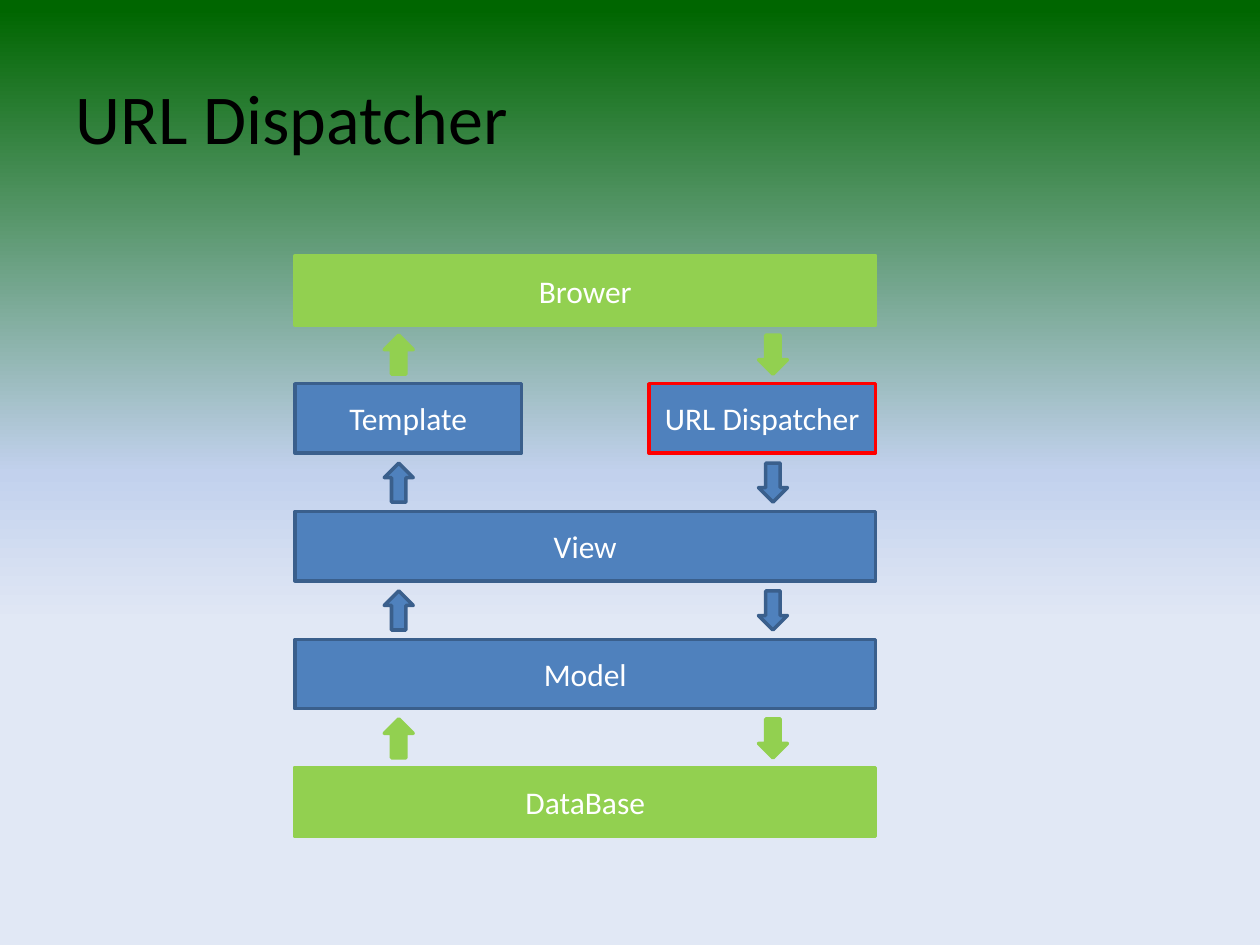
from dataclasses import dataclass

from lxml import etree
from pptx import Presentation
from pptx import util as u
from pptx.dml.color import RGBColor
from pptx.enum import shapes, text
from pptx.oxml import ns


@dataclass(frozen=True)
class Theme:
    font: str = "Calibri"
    title_size: int = 40
    label_size: int = 18
    line_width: int = 2
    title: str = "000000"
    label: str = "FFFFFF"
    green: str = "92D050"
    blue: str = "4F81BD"
    blue_edge: str = "3A5F8C"
    highlight: str = "FF0000"
    background: tuple = ((0, "006600"), (1, "006600"), (50, "C2D1ED"),
                         (66, "E1E8F5"), (100, "E1E8F5"))


@dataclass(frozen=True)
class Layer:
    label: str
    row: int
    left: float
    width: float
    fill: str
    edge: str


THEME = Theme()
GREEN = (THEME.green, THEME.green)
BLUE = (THEME.blue, THEME.blue_edge)

# Diagram grid, in inches
LEFT, TOP, ROW_STEP = 2.34, 2.03, 1.015
FULL_WIDTH, HALF_WIDTH, BOX_HEIGHT = 4.61, 1.8, 0.55
ARROW_WIDTH, ARROW_HEIGHT, ARROW_OFFSET = 0.23, 0.31, 0.63
UP_LEFT, DOWN_LEFT = 3.05, 6.02

LAYERS = [
    Layer("Brower", 0, LEFT, FULL_WIDTH, *GREEN),
    Layer("Template", 1, LEFT, HALF_WIDTH, *BLUE),
    Layer("URL Dispatcher", 1, LEFT + FULL_WIDTH - HALF_WIDTH, HALF_WIDTH,
          THEME.blue, THEME.highlight),
    Layer("View", 2, LEFT, FULL_WIDTH, *BLUE),
    Layer("Model", 3, LEFT, FULL_WIDTH, *BLUE),
    Layer("DataBase", 4, LEFT, FULL_WIDTH, *GREEN),
]
ARROW_COLOURS = [GREEN, BLUE, BLUE, GREEN]


def set_background(slide) -> None:
    """Fill the slide from top to bottom with the theme's gradient."""
    fill = slide.background.fill
    fill.gradient()
    fill.gradient_angle = 270
    stops = slide.element.xpath(".//p:bg//a:gsLst")[0]
    for stop in list(stops):
        stops.remove(stop)
    for percent, colour in THEME.background:
        stop = etree.SubElement(stops, ns.qn("a:gs"), pos=str(percent * 1000))
        etree.SubElement(stop, ns.qn("a:srgbClr"), val=colour)


def write(shape, content: str, size: int, colour: str, alignment) -> None:
    frame = shape.text_frame
    frame.text = content
    frame.vertical_anchor = text.MSO_ANCHOR.MIDDLE
    paragraph = frame.paragraphs[0]
    paragraph.alignment = alignment
    font = paragraph.runs[0].font
    for name, value in {"name": THEME.font, "size": u.Pt(size)}.items():
        setattr(font, name, value)
    font.color.rgb = RGBColor.from_string(colour)


def add_block(slide, kind, left: float, top: float, width: float,
              height: float, fill: str, edge: str):
    shape = slide.shapes.add_shape(
        kind, *(u.Inches(length) for length in (left, top, width, height)))
    shape.shadow.inherit = False
    shape.fill.solid()
    shape.fill.fore_color.rgb = RGBColor.from_string(fill)
    shape.line.color.rgb = RGBColor.from_string(edge)
    shape.line.width = u.Pt(THEME.line_width)
    return shape


def add_layer(slide, layer: Layer) -> None:
    box = add_block(slide, shapes.MSO_SHAPE.RECTANGLE, layer.left,
                    TOP + layer.row * ROW_STEP, layer.width, BOX_HEIGHT,
                    layer.fill, layer.edge)
    write(box, layer.label, THEME.label_size, THEME.label,
          text.PP_ALIGN.CENTER)


def add_arrow_pair(slide, row: int, fill: str, edge: str) -> None:
    top = TOP + row * ROW_STEP + ARROW_OFFSET
    for kind, left in ((shapes.MSO_SHAPE.UP_ARROW, UP_LEFT),
                       (shapes.MSO_SHAPE.DOWN_ARROW, DOWN_LEFT)):
        add_block(slide, kind, left, top, ARROW_WIDTH, ARROW_HEIGHT,
                  fill, edge)


def main() -> None:
    presentation = Presentation()
    presentation.slide_width = u.Inches(10)
    presentation.slide_height = u.Inches(7.5)
    slide = presentation.slides.add_slide(presentation.slide_layouts[5])
    set_background(slide)

    # Title
    title = slide.shapes.title
    place = {"left": 0.5, "top": 0.3, "width": 9, "height": 1.25}
    for name, value in place.items():
        setattr(title, name, u.Inches(value))
    write(title, "URL Dispatcher", THEME.title_size, THEME.title,
          text.PP_ALIGN.LEFT)

    # Layers of the request cycle and the arrows between them
    for layer in LAYERS:
        add_layer(slide, layer)
    for row, colours in enumerate(ARROW_COLOURS):
        add_arrow_pair(slide, row, *colours)

    presentation.save("out.pptx")


if __name__ == "__main__":
    main()
